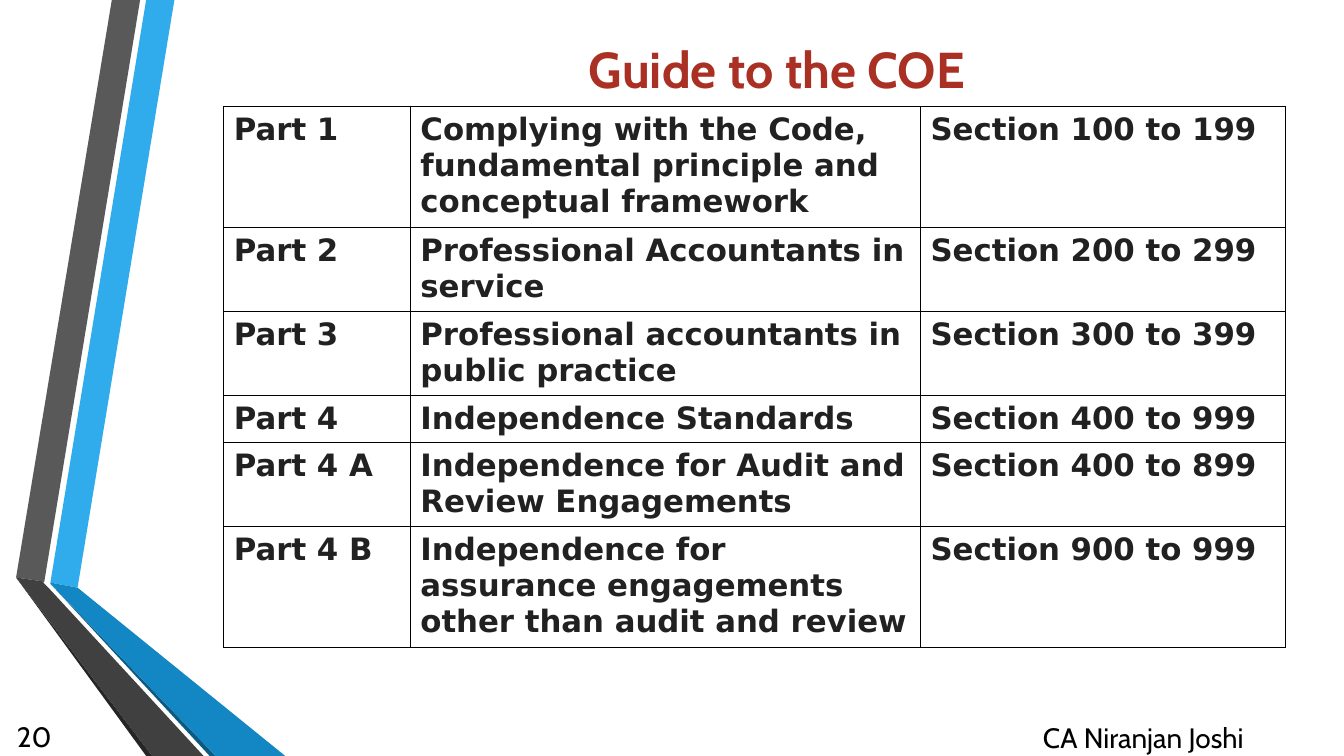
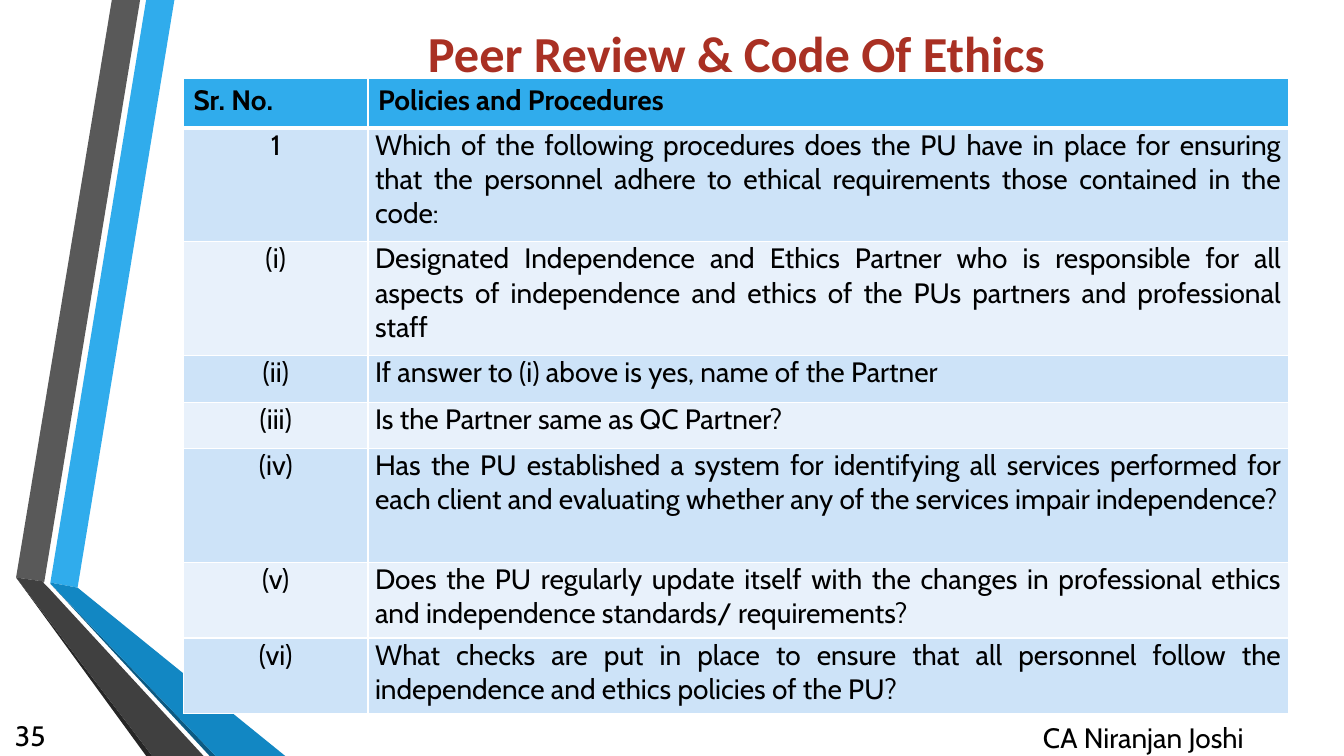
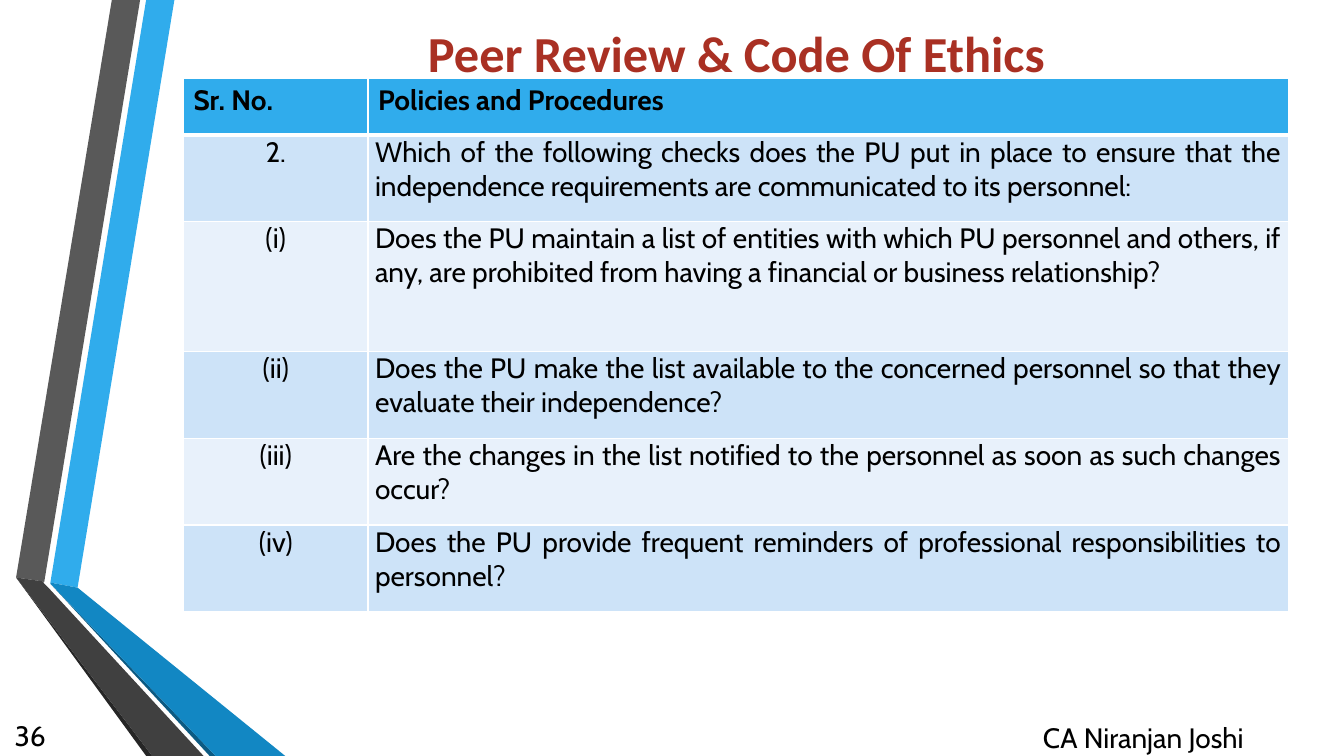
"""Build three slides on the guide to the code of ethics and its peer review."""
from dataclasses import dataclass

from lxml.etree import SubElement
from pptx import Presentation
from pptx.dml.color import RGBColor
from pptx.enum.text import MSO_ANCHOR as Anchor, PP_ALIGN as Align
from pptx.oxml.ns import qn
from pptx.util import Inches, Pt

COLORS = {
    "sky": "30ACEC", "blue": "1287C3", "navy": "0C5A82",
    "gray": "595959", "charcoal": "404040", "soot": "262626",
    "title": "A93023", "ink": "212121", "black": "000000", "white": "FFFFFF",
    "band_dark": "CDE3F8", "band_light": "E8F1FB",
}


@dataclass(frozen=True)
class Band:
    color: str
    points: tuple[tuple[float, float], ...]


@dataclass(frozen=True)
class Box:
    left: float
    top: float
    width: float
    height: float


@dataclass(frozen=True)
class Font:
    name: str
    size: int
    color: str = "black"
    bold: bool = False


@dataclass(frozen=True)
class Cell:
    font: Font
    align: Align | None = None
    fill: str | None = None
    border: str = "white"
    bottom: int = 1
    tight: bool = False


@dataclass(frozen=True)
class Row:
    height: float
    texts: tuple[str, ...]


@dataclass(frozen=True)
class Review:
    number: str
    header_height: float
    rows: tuple[Row, ...]


BANDS = (
    Band("sky", ((0.5, 5.78), (0.77, 5.83), (1.73, 0), (1.45, 0))),
    Band("gray", ((1.39, 0), (1.11, 0), (0.16, 5.73), (0.44, 5.77))),
    Band("soot", ((0.16, 5.73), (1.45, 7.5), (1.51, 7.5))),
    Band("navy", ((0.5, 5.79), (2.08, 7.5), (2.14, 7.5))),
    Band("blue", ((0.5, 5.79), (2.14, 7.5), (2.83, 7.5), (0.77, 5.83), (0.5, 5.78))),
    Band("charcoal", ((2.02, 7.5), (0.48, 5.83), (0.43, 5.78), (0.44, 5.77),
                      (0.16, 5.73), (1.51, 7.5))),
)

BODY = Font("Cabin", 20)
HEADER = Cell(Font("Cabin", 20, bold=True), fill="sky", bottom=3)
GUIDE_CELL = Cell(Font("DejaVu Sans", 22, "ink", True), border="black")

GUIDE_ROWS = (
    Row(1.16, ("Part 1", "Complying with the Code, fundamental principle and conceptual framework",
               "Section 100 to 199")),
    Row(0.81, ("Part 2", "Professional Accountants in service", "Section 200 to 299")),
    Row(0.81, ("Part 3", "Professional accountants in public practice", "Section 300 to 399")),
    Row(0.46, ("Part 4", "Independence Standards", "Section 400 to 999")),
    Row(0.81, ("Part 4 A", "Independence for Audit and Review Engagements",
               "Section 400 to 899")),
    Row(1.16, ("Part 4 B", "Independence for assurance engagements other than audit and review",
               "Section 900 to 999")),
)

REVIEWS = (
    Review("35", 0.49, (
        Row(1.13, ("1", "Which of the following procedures does the PU have in place for ensuring "
                   "that the personnel adhere to ethical requirements those contained in the code:")),
        Row(1.13, ("(i)", "Designated Independence and Ethics Partner who is responsible for all "
                   "aspects of independence and ethics of the PUs partners and professional staff")),
        Row(0.46, ("(ii)", "If answer to (i) above is yes, name of the Partner")),
        Row(0.46, ("(iii)", "Is the Partner same as QC Partner?")),
        Row(1.13, ("(iv)", "Has the PU established a system for identifying all services performed "
                   "for each client and evaluating whether any of the services impair independence?")),
        Row(0.75, ("(v)", "Does the PU regularly update itself with the changes in professional "
                   "ethics and independence standards/ requirements?")),
        Row(0.75, ("(vi)", "What checks are put in place to ensure that all personnel follow the "
                   "independence and ethics policies of the PU?")),
    )),
    Review("36", 0.56, (
        Row(0.86, ("2.", "Which of the following checks does the PU put in place to ensure that the "
                   "independence requirements are communicated to its personnel:")),
        Row(1.29, ("(i)", "Does the PU maintain a list of entities with which PU personnel and "
                   "others, if any, are prohibited from having a financial or business relationship?")),
        Row(0.86, ("(ii)", "Does the PU make the list available to the concerned personnel so that "
                   "they evaluate their independence?")),
        Row(0.86, ("(iii)", "Are the changes in the list notified to the personnel as soon as such "
                   "changes occur?")),
        Row(0.86, ("(iv)", "Does the PU provide frequent reminders of professional responsibilities "
                   "to personnel?")),
    )),
)


def rgb(color: str) -> RGBColor:
    return RGBColor.from_string(COLORS[color])


def write(tf, text: str, font: Font, align: Align | None) -> None:
    tf.text = text
    p = tf.paragraphs[0]
    if align is not None:
        p.alignment = align
    for r in p.runs:
        r.font.name = font.name
        r.font.size = Pt(font.size)
        r.font.bold = font.bold
        r.font.color.rgb = rgb(font.color)


def add_text(s, box: Box, text: str, font: Font, align: Align = Align.CENTER,
             anchor: Anchor = Anchor.MIDDLE) -> None:
    sp = s.shapes.add_textbox(Inches(box.left), Inches(box.top),
                              Inches(box.width), Inches(box.height))
    tf = sp.text_frame
    tf.word_wrap = True
    tf.vertical_anchor = anchor
    write(tf, text, font, align)


def add_bands(s) -> None:
    group = s.shapes.add_group_shape()
    for band in BANDS:
        start, *rest = [(Inches(x), Inches(y)) for x, y in band.points]
        builder = group.shapes.build_freeform(*start)
        builder.add_line_segments(rest, close=True)
        sp = builder.convert_to_shape()
        sp.shadow.inherit = False
        sp.fill.solid()
        sp.fill.fore_color.rgb = rgb(band.color)
        sp.line.fill.background()


def add_slide(prs, title: str, title_box: Box, title_font: str,
              number: str, number_box: Box, number_align: Align):
    s = prs.slides.add_slide(prs.slide_layouts[6])
    add_bands(s)
    add_text(s, title_box, title, Font(title_font, 36, "title", True))
    add_text(s, number_box, number, BODY, number_align)
    add_text(s, Box(9.59, 7.1, 3.5, 0.4), "CA Niranjan Joshi", BODY, anchor=Anchor.TOP)
    return s


def set_borders(cell, color: str, bottom: int) -> None:
    props = cell._tc.get_or_add_tcPr()
    for side, width in (("lnL", 1), ("lnR", 1), ("lnT", 1), ("lnB", bottom)):
        ln = SubElement(props, qn(f"a:{side}"), w=str(Pt(width)))
        fill = SubElement(ln, qn("a:solidFill"))
        SubElement(fill, qn("a:srgbClr"), val=COLORS[color])


def format_cell(cell, text: str, look: Cell) -> None:
    if look.tight:
        cell.margin_left = cell.margin_right = Inches(0.07)
        cell.margin_top = cell.margin_bottom = 0
    set_borders(cell, look.border, look.bottom)
    if look.fill:
        cell.fill.solid()
        cell.fill.fore_color.rgb = rgb(look.fill)
    else:
        cell.fill.background()
    write(cell.text_frame, text, look.font, look.align)


def add_grid(s, left: float, top: float, widths: tuple[float, ...],
             rows: tuple[Row, ...], looks: list[tuple[Cell, ...]]) -> None:
    height = sum(row.height for row in rows)
    table = s.shapes.add_table(len(rows), len(widths), Inches(left), Inches(top),
                               Inches(sum(widths)), Inches(height)).table
    table.first_row = table.horz_banding = False
    for column, width in zip(table.columns, widths):
        column.width = Inches(width)
    for i, (row, row_looks) in enumerate(zip(rows, looks)):
        table.rows[i].height = Inches(row.height)
        for j, (text, look) in enumerate(zip(row.texts, row_looks)):
            format_cell(table.cell(i, j), text, look)


def add_guide(prs) -> None:
    s = add_slide(prs, "Guide to the COE", Box(2.83, 0.32, 9.75, 0.72), "Cabin",
                  "20", Box(0.01, 7.1, 0.6, 0.4), Align.RIGHT)
    add_grid(s, 2.22, 1.06, (1.85, 5.06, 3.62), GUIDE_ROWS,
             [(GUIDE_CELL,) * 3] * len(GUIDE_ROWS))


def add_review(prs, review: Review) -> None:
    s = add_slide(prs, "Peer Review & Code Of Ethics", Box(2.17, 0.17, 10.27, 0.7), "Calibri",
                  review.number, Box(0, 7.09, 0.6, 0.4), Align.CENTER)
    header = Row(review.header_height, ("Sr. No.", "Policies and Procedures"))
    looks = [(HEADER, HEADER)]
    for i in range(len(review.rows)):
        fill = "band_light" if i % 2 else "band_dark"
        looks.append(tuple(Cell(BODY, align, fill, tight=True)
                           for align in (Align.CENTER, Align.JUSTIFY)))
    add_grid(s, 1.82, 0.78, (1.83, 9.13), (header, *review.rows), looks)


def main() -> None:
    prs = Presentation()
    prs.slide_width, prs.slide_height = Inches(13.33), Inches(7.5)
    add_guide(prs)
    for review in REVIEWS:
        add_review(prs, review)
    prs.save("out.pptx")


if __name__ == "__main__":
    main()
